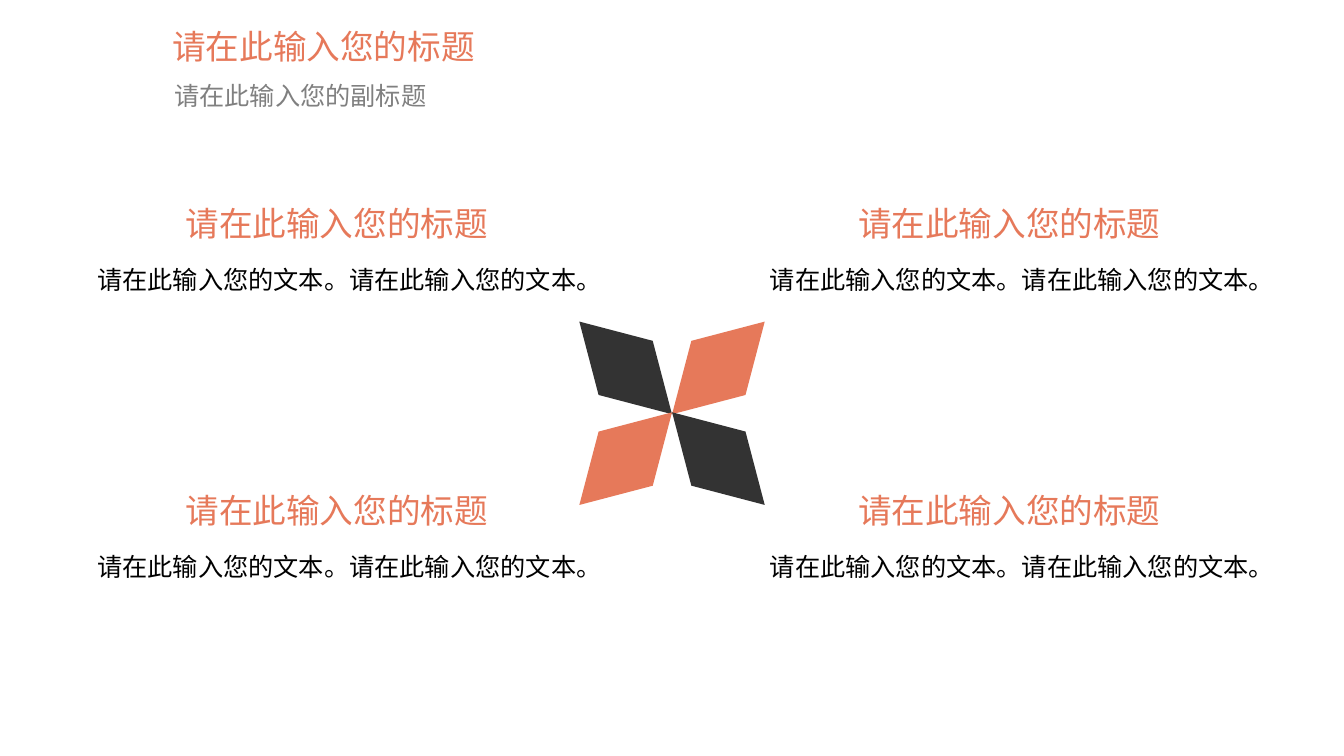
from pptx import Presentation
from pptx.dml.color import RGBColor
from pptx.enum.shapes import MSO_SHAPE
from pptx.enum.text import MSO_ANCHOR, PP_ALIGN
from pptx.util import Inches, Pt

# Content
TITLE = "请在此输入您的标题"
SUBTITLE = "请在此输入您的副标题"
BLOCKS = [  # column, row, heading, body
    (0, 0, "请在此输入您的标题", "请在此输入您的文本。请在此输入您的文本。"),
    (1, 0, "请在此输入您的标题", "请在此输入您的文本。请在此输入您的文本。"),
    (0, 1, "请在此输入您的标题", "请在此输入您的文本。请在此输入您的文本。"),
    (1, 1, "请在此输入您的标题", "请在此输入您的文本。请在此输入您的文本。"),
]

# Style
FONT = "Arial"
ORANGE = RGBColor(0xE6, 0x79, 0x5A)
DARK = RGBColor(0x33, 0x33, 0x33)
GRAY = RGBColor(0x80, 0x80, 0x80)
BLACK = RGBColor(0, 0, 0)

# Grid, in inches
SLIDE_W, SLIDE_H = 13.33, 7.5
COLUMNS = [(0.85, 4.98), (7.5, 5.02)]  # left, width
ROWS = [1.96, 4.81]
HEAD_H, BODY_H = 0.61, 1.4
CENTER_X, CENTER_Y = SLIDE_W / 2, 4.1
PETAL_W, PETAL_H = 1.3, 0.76
PETAL_DX, PETAL_DY = 0.46, 0.45

prs = Presentation()
prs.slide_width, prs.slide_height = Inches(SLIDE_W), Inches(SLIDE_H)
s = prs.slides.add_slide(prs.slide_layouts[6])


def add_text(box, text, size, color, align=PP_ALIGN.LEFT,
             anchor=MSO_ANCHOR.TOP, spacing=None):
    tf = s.shapes.add_textbox(*map(Inches, box)).text_frame
    tf.word_wrap = True
    tf.vertical_anchor = anchor
    p = tf.paragraphs[0]
    p.alignment = align
    p.line_spacing = spacing
    r = p.add_run()
    r.text = text
    r.font.name = FONT
    r.font.size = Pt(size)
    r.font.color.rgb = color


# Pinwheel of four diamonds meeting at one point
for side_x in (-1, 1):
    for side_y in (-1, 1):
        falling = side_x == side_y
        left = CENTER_X + side_x * PETAL_DX - PETAL_W / 2
        top = CENTER_Y + side_y * PETAL_DY - PETAL_H / 2
        sp = s.shapes.add_shape(MSO_SHAPE.FLOWCHART_DECISION, Inches(left),
                                Inches(top), Inches(PETAL_W), Inches(PETAL_H))
        sp.rotation = 45 if falling else 135
        sp.shadow.inherit = False
        sp.fill.solid()
        sp.fill.fore_color.rgb = DARK if falling else ORANGE
        sp.line.fill.background()

# Four text blocks
for col, row, heading, body in BLOCKS:
    left, width = COLUMNS[col]
    top = ROWS[row]
    add_text((left, top, width, HEAD_H), heading, 24, ORANGE, PP_ALIGN.CENTER)
    add_text((left, top + HEAD_H, width, BODY_H), body, 18, BLACK, PP_ALIGN.CENTER)

# Slide title and subtitle
add_text((1.61, 0.14, 9.56, 0.64), TITLE, 24, ORANGE, anchor=MSO_ANCHOR.MIDDLE)
add_text((1.63, 0.78, 9.54, 0.54), SUBTITLE, 18, GRAY, spacing=0.9)

prs.save("out.pptx")
